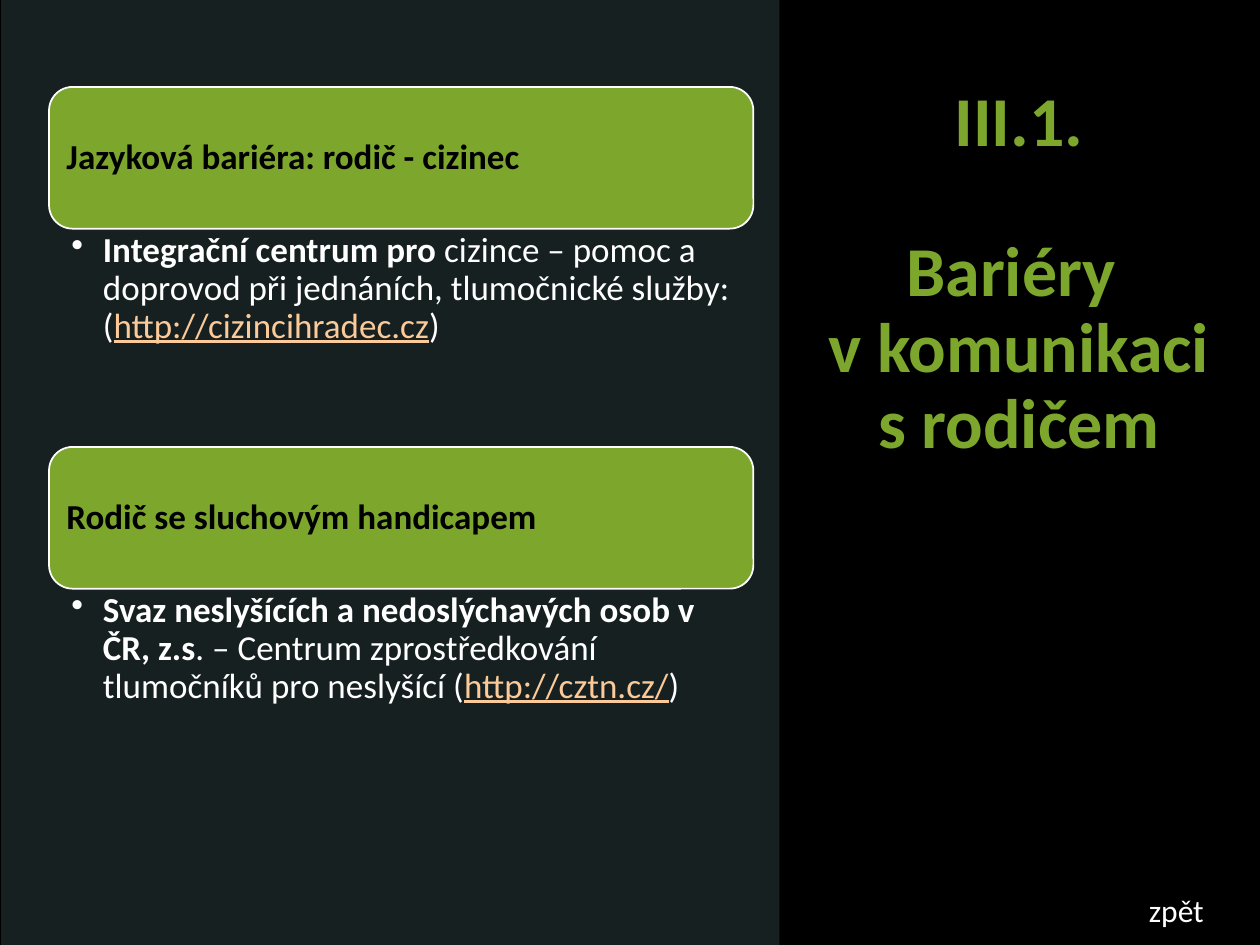
import pptx
import pptx.dml.color
import pptx.enum.shapes
import pptx.enum.text
import pptx.oxml
import pptx.oxml.ns
import pptx.util

Pt = pptx.util.Pt
RGBColor = pptx.dml.color.RGBColor
Shape = pptx.enum.shapes.MSO_SHAPE
Align = pptx.enum.text.PP_ALIGN
Anchor = pptx.enum.text.MSO_ANCHOR

BLACK = RGBColor(0x00, 0x00, 0x00)
WHITE = RGBColor(0xFF, 0xFF, 0xFF)
GREEN = RGBColor(0x7D, 0xA6, 0x2C)
PALE_BLUE = RGBColor(0x94, 0xD7, 0xE4)
LINK = RGBColor(0xFB, 0xCA, 0x98)

BOLD = {"bold": True}
PLAIN = {}
ADDRESS = {"color": LINK, "underline": True}

TITLE = ["III.1.", "Bariéry \vv komunikaci s rodičem"]
BACK = "zpět"
SECTIONS = [
    ("Jazyková bariéra: rodič - cizinec", [
        ("Integrační centrum pro ", BOLD),
        ("cizince – pomoc a doprovod při jednáních, tlumočnické služby: (", PLAIN),
        ("http://cizincihradec.cz", ADDRESS),
        (")", PLAIN)]),
    ("Rodič se sluchovým handicapem", [
        ("Svaz neslyšících a nedoslýchavých osob v ČR, z.s", BOLD),
        (". – Centrum zprostředkování tlumočníků pro neslyšící (", PLAIN),
        ("http://cztn.cz/", ADDRESS),
        (")", PLAIN)]),
]

PANEL_WIDTH = 445.5
CARD_LEFT, CARD_TOP, CARD_WIDTH, CARD_HEIGHT = 28, 49.7, 402.5, 81
CARD_STEP = 205.7
BODY_HEIGHT = 85
BODY_INDENT = 18


def add_panel(slide, kind, left, top, width, height, fill, alpha=None, line=None):
    shape = slide.shapes.add_shape(kind, Pt(left), Pt(top), Pt(width), Pt(height))
    shape.shadow.inherit = False
    shape.fill.solid()
    shape.fill.fore_color.rgb = fill
    if alpha is not None:
        color = shape.fill._xPr.find(".//" + pptx.oxml.ns.qn("a:srgbClr"))
        color.append(pptx.oxml.parse_xml(
            f'<a:alpha {pptx.oxml.ns.nsdecls("a")} val="{alpha * 1000}"/>'))
    if line is None:
        shape.line.fill.background()
    else:
        shape.line.color.rgb = line
        shape.line.width = Pt(1)
    return shape


def add_box(slide, left, top, width, height):
    return slide.shapes.add_textbox(Pt(left), Pt(top), Pt(width), Pt(height))


def set_frame(shape, insets, anchor=Anchor.TOP):
    frame = shape.text_frame
    frame.word_wrap = True
    frame.vertical_anchor = anchor
    (frame.margin_left, frame.margin_top,
     frame.margin_right, frame.margin_bottom) = map(Pt, insets)
    return frame.paragraphs[0]


def format_paragraph(paragraph, align=Align.LEFT, spacing=0.9, before=0):
    paragraph.alignment = align
    paragraph.line_spacing = spacing
    paragraph.space_before = Pt(before)


def add_bullet(paragraph):
    properties = paragraph._p.get_or_add_pPr()
    properties.set("marL", str(Pt(BODY_INDENT)))
    properties.set("indent", str(-Pt(BODY_INDENT)))
    properties.append(pptx.oxml.parse_xml(
        f'<a:buChar {pptx.oxml.ns.nsdecls("a")} char="•"/>'))


def add_text(paragraph, text, size=20, color=WHITE, bold=False, underline=False):
    """Append text to the paragraph; a vertical tab becomes a line break."""
    for index, part in enumerate(text.split("\v")):
        if index:
            paragraph.add_line_break()
        run = paragraph.add_run()
        run.text = part
        run.font.name = "Calibri"
        run.font.size = Pt(size)
        run.font.color.rgb = color
        run.font.bold = bold
        run.font.underline = underline


def add_section(slide, top, heading, body):
    card = add_panel(slide, Shape.ROUNDED_RECTANGLE, CARD_LEFT, top,
                     CARD_WIDTH, CARD_HEIGHT, GREEN, line=WHITE)
    paragraph = set_frame(card, (6, 6, 6, 6), Anchor.MIDDLE)
    format_paragraph(paragraph)
    add_text(paragraph, heading, color=BLACK, bold=True)

    box = add_box(slide, CARD_LEFT, top + CARD_HEIGHT, CARD_WIDTH, BODY_HEIGHT)
    paragraph = set_frame(box, (12.8, 2, 11.5, 2))
    format_paragraph(paragraph)
    add_bullet(paragraph)
    for text, style in body:
        add_text(paragraph, text, **style)


def main():
    presentation = pptx.Presentation()
    presentation.slide_width, presentation.slide_height = Pt(720), Pt(540)
    slide = presentation.slides.add_slide(presentation.slide_layouts[6])
    slide.background.fill.solid()
    slide.background.fill.fore_color.rgb = BLACK

    add_panel(slide, Shape.RECTANGLE, 0.7, 0, PANEL_WIDTH - 0.7, 540, PALE_BLUE, alpha=15)
    add_panel(slide, Shape.RECTANGLE, PANEL_WIDTH, 0, 720 - PANEL_WIDTH, 540, BLACK)

    title = add_box(slide, 458, 45.4, 248.4, 380)
    paragraph = set_frame(title, (7.2, 3.6, 7.2, 3.6))
    for index, text in enumerate(TITLE):
        if index:
            paragraph = title.text_frame.add_paragraph()
        format_paragraph(paragraph, Align.CENTER, before=43 * index)
        add_text(paragraph, text, size=40, color=GREEN, bold=True)

    for index, (heading, body) in enumerate(SECTIONS):
        add_section(slide, CARD_TOP + index * CARD_STEP, heading, body)

    back = add_box(slide, 649.4, 505.4, 57, 29)
    paragraph = set_frame(back, (7.2, 3.6, 7.2, 3.6))
    format_paragraph(paragraph, spacing=1)
    add_text(paragraph, BACK, size=18)

    presentation.save("out.pptx")


if __name__ == "__main__":
    main()
